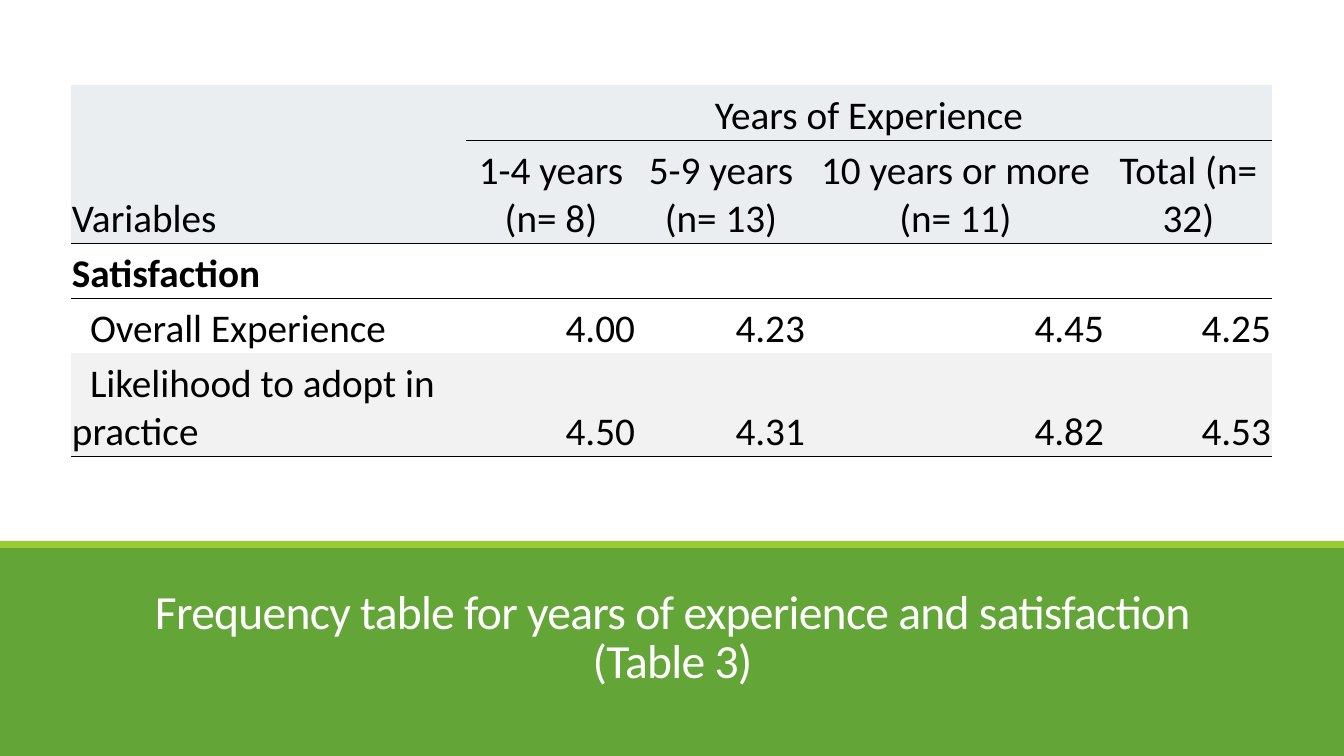
from lxml.etree import SubElement, fromstring
from pptx import Presentation
from pptx.dml.color import RGBColor
from pptx.enum.shapes import MSO_SHAPE as SHAPE
from pptx.enum.text import MSO_ANCHOR as ANCHOR, MSO_AUTO_SIZE as AUTOSIZE, PP_ALIGN as ALIGN
from pptx.oxml.ns import nsdecls, qn
from pptx.util import Pt

# Content
TITLE = "Frequency table for years of experience and satisfaction (Table 3)"
ROWS = [
    ["", "Years of Experience", "", "", ""],
    ["Variables", "1-4 years (n= 8)", "5-9 years (n= 13)", "10 years or more (n= 11)", "Total (n= 32)"],
    ["Satisfaction", "", "", "", ""],
    ["Overall Experience", "4.00", "4.23", "4.45", "4.25"],
    ["Likelihood to adopt in practice", "4.50", "4.31", "4.82", "4.53"],
]

# Look and layout, in px
FONT = "Calibri"
GREEN, LIME, WHITE, BLACK = "63A537", "99CB38", "FFFFFF", "000000"
ROW_FILLS = ["EBEEF1", "EBEEF1", None, None, "F2F2F2"]
HEADER_ROWS = 2
GROUP_ROW = 2
RULED_ROWS = {0, 1, 4}
COL_W = [395, 170, 170, 299, 167]
ROW_H = [55, 103, 55, 55, 103]
SLIDE_W, SLIDE_H = 1344, 756
NO_STYLE = "{2D5ABB26-0587-4C30-8999-92F81FD0307C}"


def px(n):
    return round(n * 914400 / 100.8)


def rgb(value):
    return RGBColor.from_string(value)


def add_run(p, text, size, color, bold=False):
    r = p.add_run()
    r.text = text
    r.font.name, r.font.size, r.font.bold = FONT, Pt(size), bold
    r.font.color.rgb = rgb(color)
    return r


def add_band(s, y, h, color):
    sp = s.shapes.add_shape(SHAPE.RECTANGLE, 0, px(y), px(SLIDE_W), px(h))
    sp.shadow.inherit = False
    sp.fill.solid()
    sp.fill.fore_color.rgb = rgb(color)
    sp.line.fill.background()


def add_borders(cell, sides):
    tc_pr = cell._tc.get_or_add_tcPr()
    for i, side in enumerate(sides):
        tc_pr.insert(i, fromstring(
            f'<a:ln{side} {nsdecls("a")} w="6350"><a:solidFill>'
            f'<a:srgbClr val="{BLACK}"/></a:solidFill></a:ln{side}>'))


def fill_cell(cell, row, col, text):
    cell.margin_left = cell.margin_right = cell.margin_top = px(1)
    cell.margin_bottom = 0
    cell.vertical_anchor = ANCHOR.BOTTOM
    if ROW_FILLS[row]:
        cell.fill.solid()
        cell.fill.fore_color.rgb = rgb(ROW_FILLS[row])
    else:
        cell.fill.background()

    # Rules: the first one leaves out the label column
    ruled = RULED_ROWS - {0} if col == 0 else RULED_ROWS
    add_borders(cell, [side for side, r in (("T", row - 1), ("B", row)) if r in ruled])

    if not text:
        return
    p = cell.text_frame.paragraphs[0]
    if col == 0:
        p.alignment = ALIGN.LEFT
        if row > GROUP_ROW:
            p_pr = p._p.get_or_add_pPr()
            p_pr.set("marL", "0")
            p_pr.set("indent", str(px(18)))
    else:
        p.alignment = ALIGN.CENTER if row < HEADER_ROWS else ALIGN.RIGHT
    add_run(p, text, 28, BLACK, bold=row == GROUP_ROW)


def add_scores(s):
    frame = s.shapes.add_table(len(ROW_H), len(COL_W), px(71), px(85), px(sum(COL_W)), px(sum(ROW_H)))
    table = frame.table
    table.first_row = table.horz_banding = False
    tbl_pr = table._tbl.tblPr
    style = tbl_pr.find(qn("a:tableStyleId"))
    if style is None:
        style = SubElement(tbl_pr, qn("a:tableStyleId"))
    style.text = NO_STYLE
    for column, w in zip(table.columns, COL_W):
        column.width = px(w)
    for row, h in zip(table.rows, ROW_H):
        row.height = px(h)
    table.cell(0, 1).merge(table.cell(0, len(COL_W) - 1))
    for i, texts in enumerate(ROWS):
        for j, text in enumerate(texts):
            fill_cell(table.cell(i, j), i, j, text)


def add_title(s):
    title = s.shapes.title
    s.shapes._spTree.append(title._element)  # in front of the band
    title.left, title.top, title.width, title.height = px(118), px(579), px(1109), px(114)
    tf = title.text_frame
    tf.word_wrap, tf.auto_size, tf.vertical_anchor = True, AUTOSIZE.NONE, ANCHOR.BOTTOM
    p = tf.paragraphs[0]
    p.alignment, p.line_spacing = ALIGN.CENTER, 0.85
    r = add_run(p, TITLE, 34, WHITE)
    r.font._element.set("spc", "-50")


def main():
    prs = Presentation()
    prs.slide_width, prs.slide_height = px(SLIDE_W), px(SLIDE_H)
    s = prs.slides.add_slide(prs.slide_layouts[5])

    # Bottom band with its accent strip
    add_band(s, 546, SLIDE_H - 546, GREEN)
    add_band(s, 541, 7, LIME)

    add_title(s)
    add_scores(s)
    prs.save("out.pptx")


if __name__ == "__main__":
    main()
